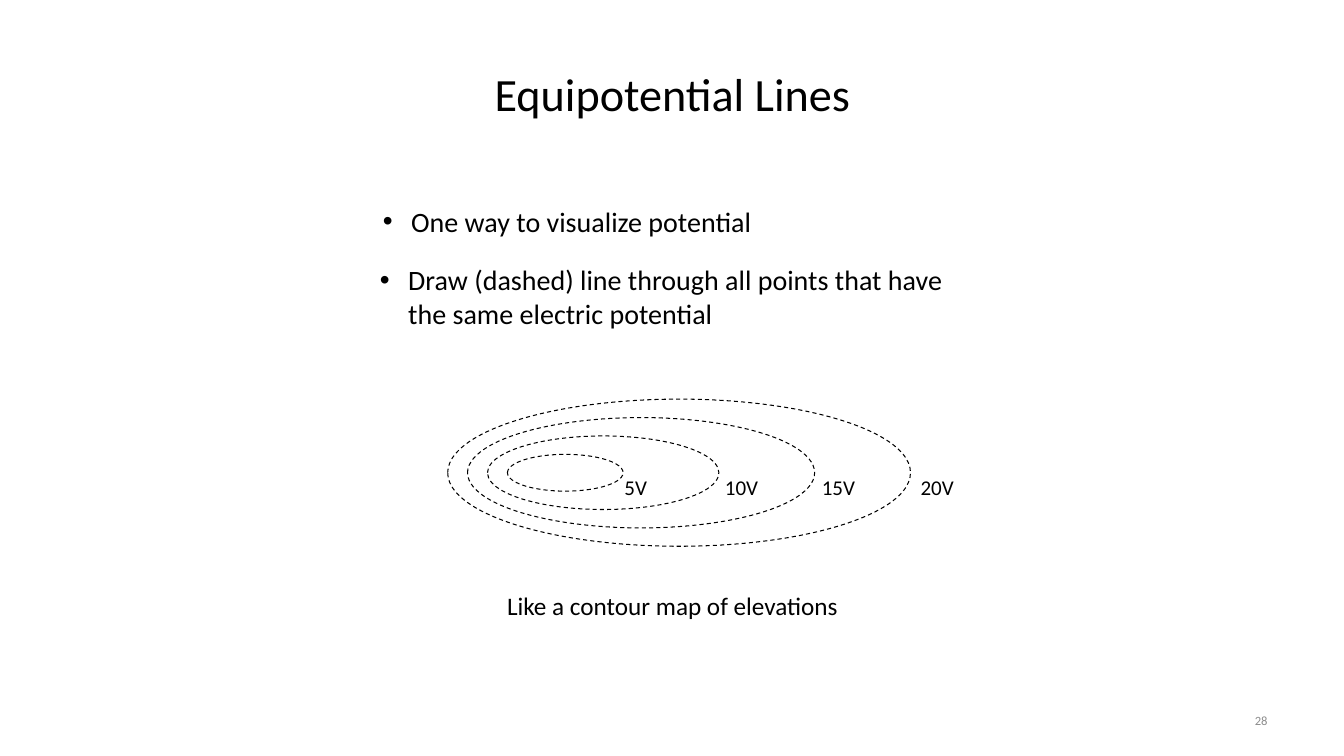
from pptx import Presentation
from pptx.dml.color import RGBColor
from pptx.enum.dml import MSO_LINE
from pptx.enum.shapes import MSO_SHAPE as Shape
from pptx.enum.text import MSO_ANCHOR as Anchor, PP_ALIGN as Align
from pptx.oxml.ns import qn
from pptx.util import Inches, Pt
from lxml.etree import SubElement

COLORS = {"ink": "000000", "muted": "8C8C8C"}
FONT = "Calibri"


def write(frame, text, size, color="ink", align=Align.LEFT,
          anchor=Anchor.TOP, after=0, bullet=False):
    frame.word_wrap = True
    frame.vertical_anchor = anchor
    paragraph = frame.paragraphs[0]
    paragraph.alignment = align
    paragraph.space_after = Pt(after)
    if bullet:
        properties = paragraph._p.get_or_add_pPr()
        properties.set("marL", str(Inches(0.28)))
        properties.set("indent", str(-Inches(0.28)))
        SubElement(properties, qn("a:buFont"), typeface="Arial")
        SubElement(properties, qn("a:buChar"), char="•")
    run = paragraph.add_run()
    run.text = text
    run.font.name = FONT
    run.font.size = Pt(size)
    run.font.color.rgb = RGBColor.from_string(COLORS[color])


class SlideBuilder:
    def __init__(self, slide):
        self.shapes = slide.shapes

    def text(self, box, text, size, **style):
        holder = self.shapes.add_textbox(*map(Inches, box))
        write(holder.text_frame, text, size, **style)

    def contour(self, left, middle, width, height):
        box = left, middle - height / 2, width, height
        ring = self.shapes.add_shape(Shape.OVAL, *map(Inches, box))
        ring.shadow.inherit = False
        ring.fill.background()
        ring.line.color.rgb = RGBColor.from_string(COLORS["ink"])
        ring.line.width = Pt(0.75)
        ring.line.dash_style = MSO_LINE.DASH


def main():
    deck = Presentation()
    deck.slide_width, deck.slide_height = Inches(13.33), Inches(7.5)
    page = SlideBuilder(deck.slides.add_slide(deck.slide_layouts[6]))

    page.text((0.67, 0.3, 12, 1.25), "Equipotential Lines", 33,
              align=Align.CENTER, anchor=Anchor.MIDDLE)
    page.text((3.7, 1.98, 5.94, 0.44), "One way to visualize potential", 20,
              bullet=True)
    page.text((3.67, 2.56, 6.12, 0.77),
              "Draw (dashed) line through all points that have "
              "the same electric potential", 20, bullet=True)
    page.text((3.39, 5.81, 6.56, 0.4), "Like a contour map of elevations", 18,
              align=Align.CENTER)

    label_lefts = {5: 5.96, 10: 7.01, 15: 7.97, 20: 8.95}
    for volts in reversed(label_lefts):
        scale = volts / 20
        page.contour(5.23 - 0.79 * scale, 4.69, 4.59 * scale, 1.46 * scale)
    for volts, left in label_lefts.items():
        page.text((left, 4.66, 0.69, 0.39), f"{volts}V", 15,
                  align=Align.CENTER, after=7.5)

    page.text((9.56, 6.95, 3.11, 0.4), "28", 9, color="muted",
              align=Align.RIGHT, anchor=Anchor.MIDDLE)
    deck.save("out.pptx")


if __name__ == "__main__":
    main()
